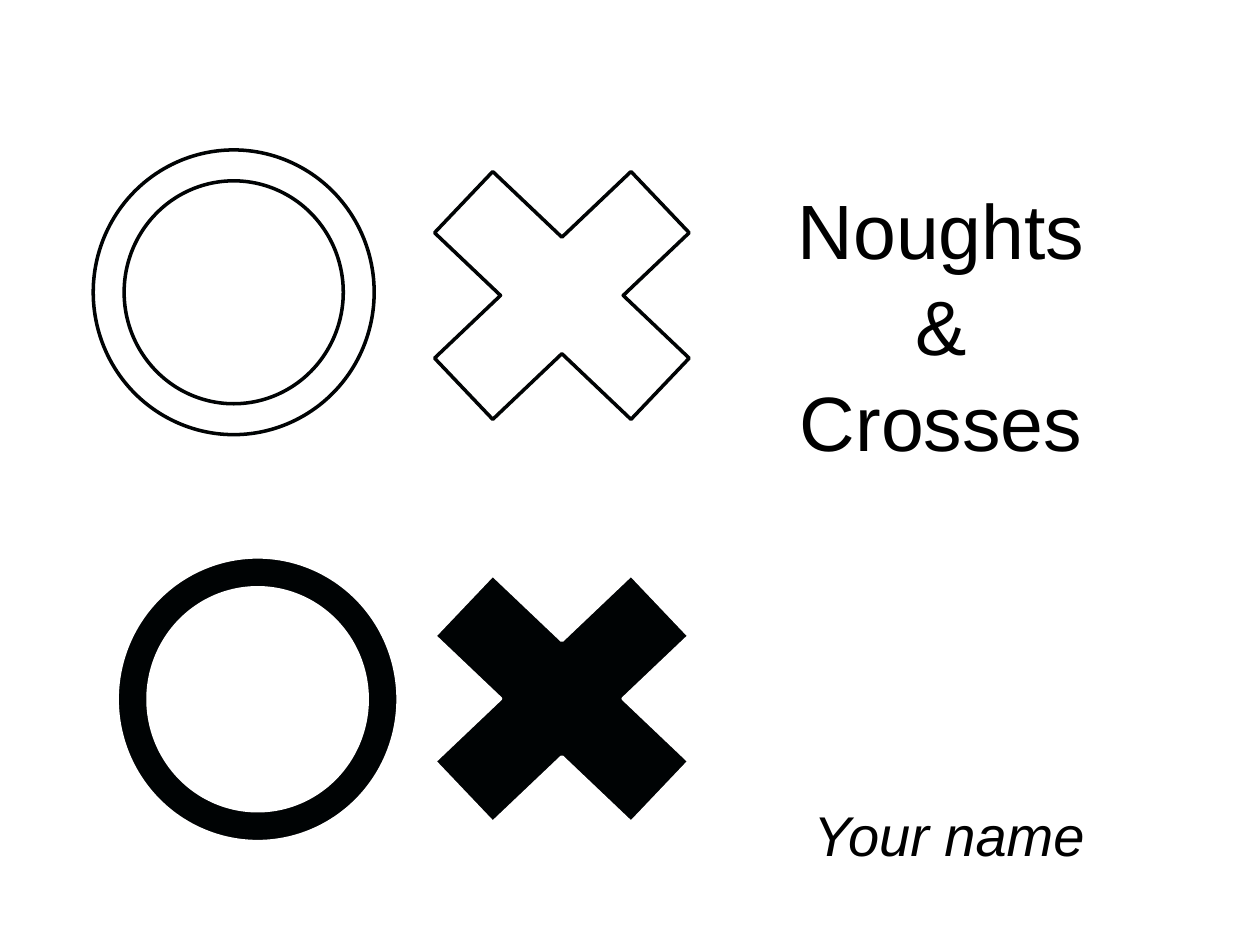
import pptx
import pptx.util
import pptx.dml.color
import pptx.enum.shapes
import pptx.enum.text

Inches, Pt = pptx.util.Inches, pptx.util.Pt
SHAPE = pptx.enum.shapes.MSO_SHAPE
ALIGN = pptx.enum.text.PP_ALIGN

COLORS = {"ink": "000304", "paper": "FFFFFF", "text": "000000"}


class Deck:
    font = "Arial"
    line_width = Pt(2)

    def __init__(self, prs):
        self.s = prs.slides.add_slide(prs.slide_layouts[5])

    def color(self, name):
        return pptx.dml.color.RGBColor.from_string(COLORS[name])

    def place(self, sp, box):
        sp.left, sp.top, sp.width, sp.height = (Inches(v) for v in box)

    def mark(self, kind, box, fill, line):
        sp = self.s.shapes.add_shape(kind, *(Inches(v) for v in box))
        sp.shadow.inherit = False
        sp.fill.solid()
        sp.fill.fore_color.rgb = self.color(fill)
        sp.line.color.rgb = self.color(line)
        sp.line.width = self.line_width
        return sp

    def nought(self, left, top, fill, line):
        sp = self.mark(SHAPE.DONUT, (left, top, 2.23, 2.26), fill, line)
        sp.adjustments[0] = 0.11

    def cross(self, left, top, fill, line):
        self.mark(SHAPE.MATH_MULTIPLY, (left, top, 3, 2.85), fill, line)

    def fill_text(self, sp, text, size, align, italic=False, spacing=1.0, before=0):
        tf = sp.text_frame
        tf.word_wrap = True
        tf.auto_size = pptx.enum.text.MSO_AUTO_SIZE.NONE
        tf.vertical_anchor = pptx.enum.text.MSO_ANCHOR.TOP
        tf.text = text
        for p in tf.paragraphs:
            p.alignment = align
            p.line_spacing = spacing
            p.space_before = Pt(before)
            for r in p.runs:
                r.font.name = self.font
                r.font.size = Pt(size)
                r.font.italic = italic
                r.font.color.rgb = self.color("text")

    def title(self, text, box):
        sp = self.s.shapes.title
        self.place(sp, box)
        self.fill_text(sp, text, 44, ALIGN.CENTER, spacing=1.04)
        sp.text_frame.margin_top = Inches(0.08)

    def text(self, text, box):
        sp = self.s.shapes.add_textbox(*(Inches(v) for v in box))
        self.fill_text(sp, text, 32, ALIGN.LEFT, italic=True, before=3)


def main():
    prs = pptx.Presentation()
    prs.slide_width, prs.slide_height = Inches(10), Inches(7.5)
    deck = Deck(prs)

    # One outlined pair above one solid pair
    for nought_left, nought_top, cross_top, fill, line in (
        (0.74, 1.19, 0.92, "paper", "ink"),
        (0.93, 4.42, 4.12, "ink", "paper"),
    ):
        deck.nought(nought_left, nought_top, fill, line)
        deck.cross(2.96, cross_top, fill, line)

    deck.title("Noughts\n&\nCrosses", (5.63, 1.34, 3.68, 2.19))
    deck.text("Your name", (6.36, 6.3, 2.95, 0.68))
    prs.save("out.pptx")


if __name__ == "__main__":
    main()
